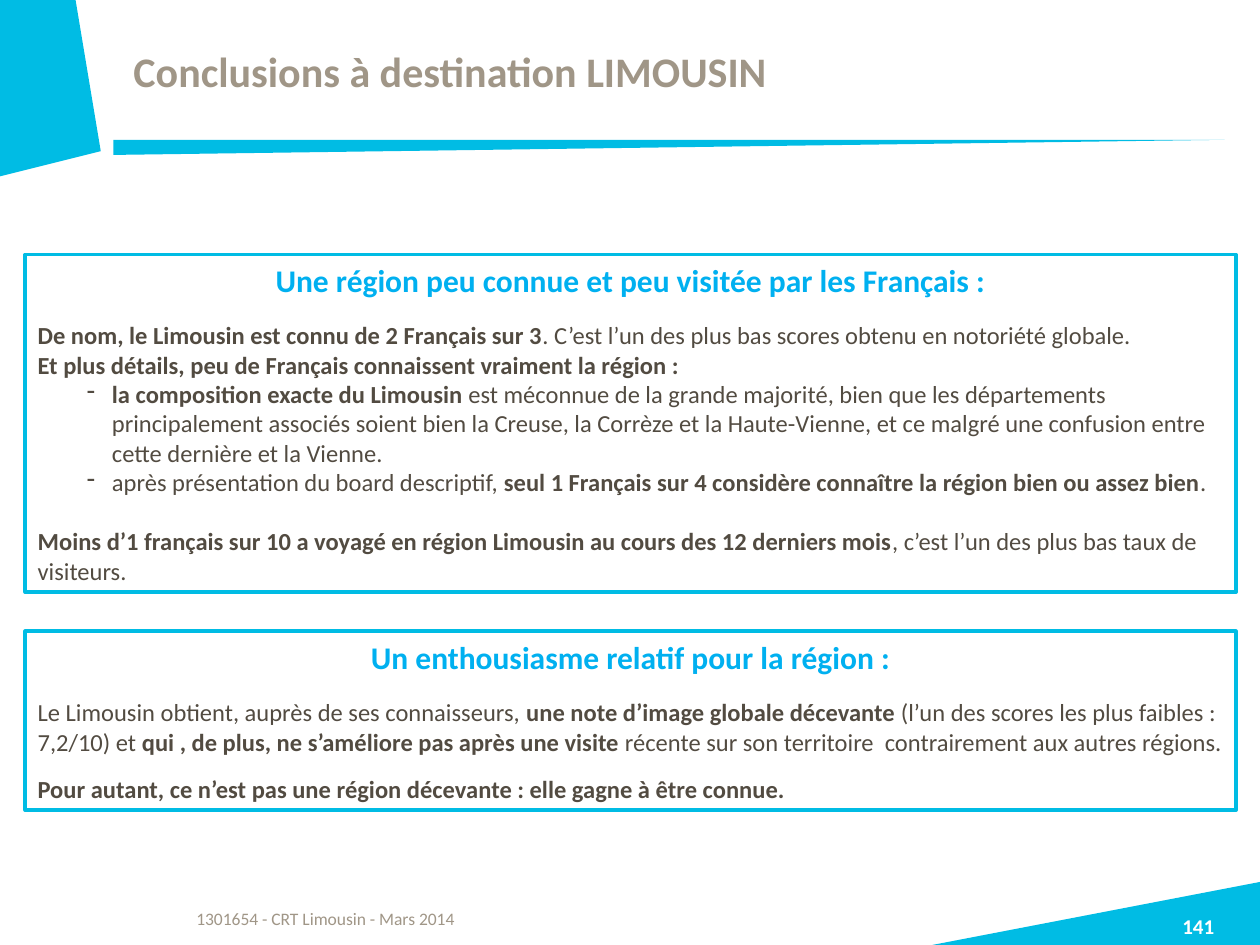
import pptx
import pptx.util
import pptx.dml.color
import pptx.enum.shapes
import pptx.enum.text
import lxml.etree
from dataclasses import dataclass
from typing import NamedTuple

# Grid of 100 columns by 75 rows on a 10 x 7.5 inch slide
COLS, ROWS = 100, 75
WIDE, HIGH = pptx.util.Inches(10), pptx.util.Inches(7.5)
CELL = WIDE // COLS

CYAN, SKY, WHITE = "00BCE4", "00B0F0", "FFFFFF"
TAUPE, BROWN = "A09687", "524B41"
FONT = "Calibri"

SHAPE = pptx.enum.shapes.MSO_SHAPE
ALIGN = pptx.enum.text.PP_ALIGN
ANCHOR = pptx.enum.text.MSO_ANCHOR


class Area(NamedTuple):
    col: float
    row: float
    cols: float
    rows: float

    def size(self) -> list[int]:
        return [round(n * CELL) for n in self]


class Span(NamedTuple):
    text: str
    bold: bool = False


@dataclass
class Para:
    spans: list[Span]
    dash: bool = False
    before: float = 0


@dataclass
class Label:
    area: Area
    text: str
    size: float
    color: str
    bold: bool = False
    inset: bool = False
    align: ALIGN = ALIGN.LEFT
    anchor: ANCHOR = ANCHOR.TOP


@dataclass
class Panel:
    area: Area
    head: str
    paras: list[Para]


def paint(color: str) -> pptx.dml.color.RGBColor:
    return pptx.dml.color.RGBColor.from_string(color)


def style(run, size: float, color: str, bold: bool) -> None:
    run.font.name = FONT
    run.font.size = pptx.util.Pt(size)
    run.font.bold = bold
    run.font.color.rgb = paint(color)


def fill(shape, color: str) -> None:
    shape.shadow.inherit = False
    shape.fill.solid()
    shape.fill.fore_color.rgb = paint(color)
    shape.line.fill.background()


def add_form(slide, points: list[tuple[float, float]]) -> None:
    form = slide.shapes.build_freeform(*points[0], scale=CELL)
    form.add_line_segments(points[1:], close=True)
    fill(form.convert_to_shape(), CYAN)


def add_label(slide, label: Label) -> None:
    frame = slide.shapes.add_textbox(*label.area.size()).text_frame
    frame.word_wrap = True
    frame.vertical_anchor = label.anchor
    if not label.inset:
        frame.margin_left = frame.margin_right = 0
        frame.margin_top = frame.margin_bottom = 0
    frame.text = label.text
    para = frame.paragraphs[0]
    para.alignment = label.align
    style(para.runs[0], label.size, label.color, label.bold)


def add_dash(para) -> None:
    props = para._p.get_or_add_pPr()
    props.set("marL", str(pptx.util.Inches(0.59)))
    props.set("indent", str(pptx.util.Inches(-0.2)))
    space = pptx.oxml.ns.qn("a:buChar")
    lxml.etree.SubElement(props, space).set("char", "-")


def add_panel(slide, panel: Panel) -> None:
    box = slide.shapes.add_shape(SHAPE.RECTANGLE, *panel.area.size())
    fill(box, WHITE)
    box.line.color.rgb = paint(CYAN)
    box.line.width = pptx.util.Pt(2)
    lxml.etree.SubElement(box.line._ln, pptx.oxml.ns.qn("a:round"))

    frame = box.text_frame
    frame.word_wrap = True
    frame.vertical_anchor = ANCHOR.MIDDLE
    frame.text = panel.head
    head = frame.paragraphs[0]
    head.alignment = ALIGN.CENTER
    head.space_after = pptx.util.Pt(12)
    style(head.runs[0], 18, SKY, True)

    for item in panel.paras:
        para = frame.add_paragraph()
        para.alignment = ALIGN.LEFT
        if item.before:
            para.space_before = pptx.util.Pt(item.before)
        if item.dash:
            add_dash(para)
        for span in item.spans:
            run = para.add_run()
            run.text = span.text
            style(run, 14, BROWN, span.bold)


FORMS = [
    # Bottom right wedge
    [(73.9, ROWS), (COLS, 70.4), (COLS, ROWS)],
    # Top left block with a soft corner
    [(0, 13.9), (0, 0), (5.6, 0), (7.8, 12.2), (7.8, 12.4), (7.6, 12.5)],
]

LABELS = [
    Label(Area(10.6, 1.3, 86.6, 8.7), "Conclusions à destination LIMOUSIN",
          24, TAUPE, bold=True, anchor=ANCHOR.MIDDLE),
    Label(Area(14.6, 71.6, 67.7, 3.4), "1301654 - CRT Limousin - Mars 2014",
          10, TAUPE, inset=True),
    Label(Area(90.2, 72.5, 9.8, 2.5), "141", 12, WHITE, bold=True,
          align=ALIGN.CENTER),
]

PANELS = [
    Panel(Area(2, 20.2, 96.1, 26.8),
          "Une région peu connue et peu visitée par les Français :", [
        Para([Span("De nom, le Limousin est connu de 2 Français sur 3", True),
              Span(". C’est l’un des plus bas scores obtenu en notoriété "
                   "globale.")]),
        Para([Span("Et plus détails, peu de Français connaissent vraiment "
                   "la région :", True)]),
        Para([Span("la composition exacte du Limousin", True),
              Span(" est méconnue de la grande majorité, bien que les "
                   "départements principalement associés soient bien la "
                   "Creuse, la Corrèze et la Haute-Vienne, et ce malgré une "
                   "confusion entre cette dernière et la Vienne.")],
             dash=True),
        Para([Span("après présentation du board descriptif, "),
              Span("seul 1 Français sur 4 considère connaître la région "
                   "bien ou assez bien", True),
              Span(".")], dash=True),
        Para([Span("Moins d’1 français sur 10 a voyagé en région Limousin "
                   "au cours des 12 derniers mois", True),
              Span(", c’est l’un des plus bas taux de visiteurs.")],
             before=17),
    ]),
    Panel(Area(2, 50.1, 96.1, 14.2),
          "Un enthousiasme relatif pour la région :", [
        Para([Span("Le Limousin obtient, auprès de ses connaisseurs, "),
              Span("une note d’image globale décevante ", True),
              Span("(l’un des scores les plus faibles : 7,2/10) et "),
              Span("qui , de plus, ne s’améliore pas après une visite ", True),
              Span("récente sur son territoire  contrairement aux autres "
                   "régions.")]),
        Para([Span("Pour autant, ce n’est pas une région décevante : elle "
                   "gagne à être connue.", True)], before=10),
    ]),
]


def main() -> None:
    deck = pptx.Presentation()
    deck.slide_width, deck.slide_height = WIDE, HIGH
    slide = deck.slides.add_slide(deck.slide_layouts[6])

    # Corner shapes and the tapered rule under the title
    for points in FORMS:
        add_form(slide, points)
    rule = slide.shapes.add_shape(SHAPE.RIGHT_TRIANGLE,
                                  *Area(9, 11.1, 88.2, 1.2).size())
    fill(rule, CYAN)
    rule._element.spPr.xfrm.set("flipV", "1")

    # Title, footer and page number, then the two panels
    for label in LABELS:
        add_label(slide, label)
    for panel in PANELS:
        add_panel(slide, panel)
    deck.save("out.pptx")


if __name__ == "__main__":
    main()
